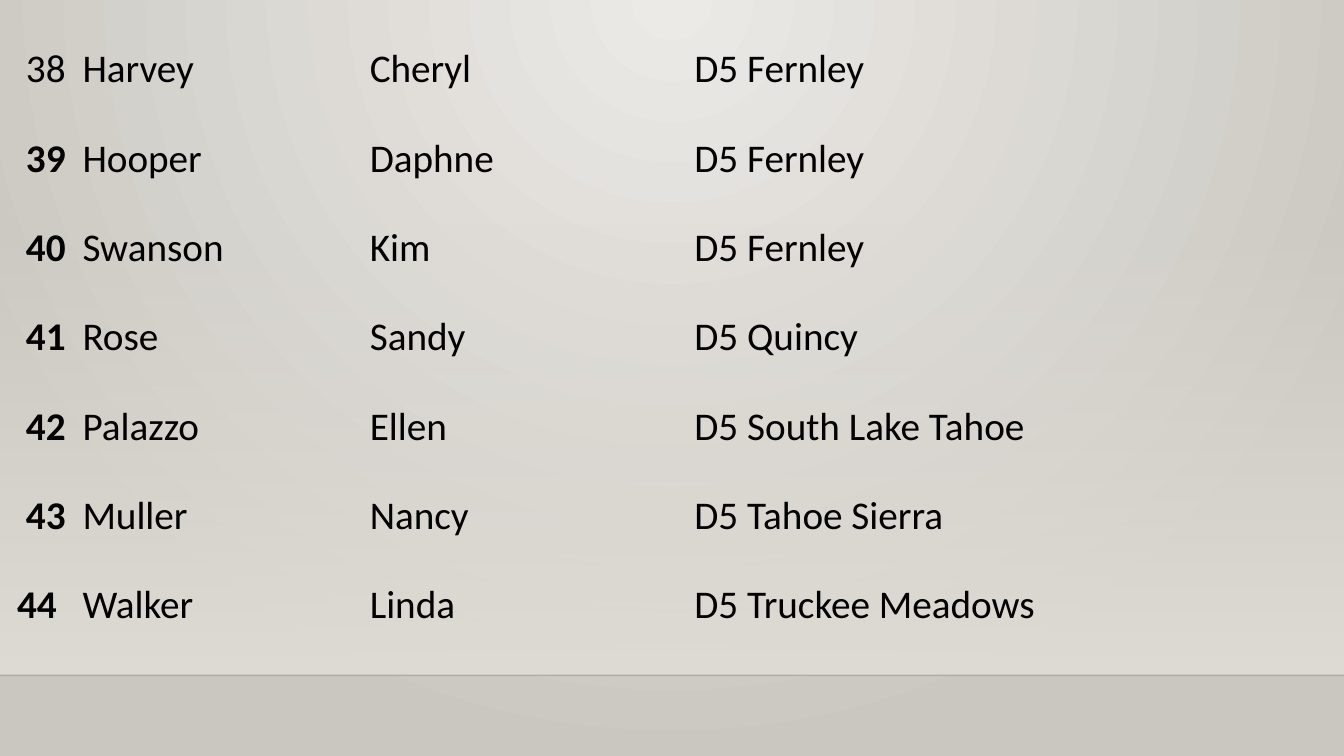
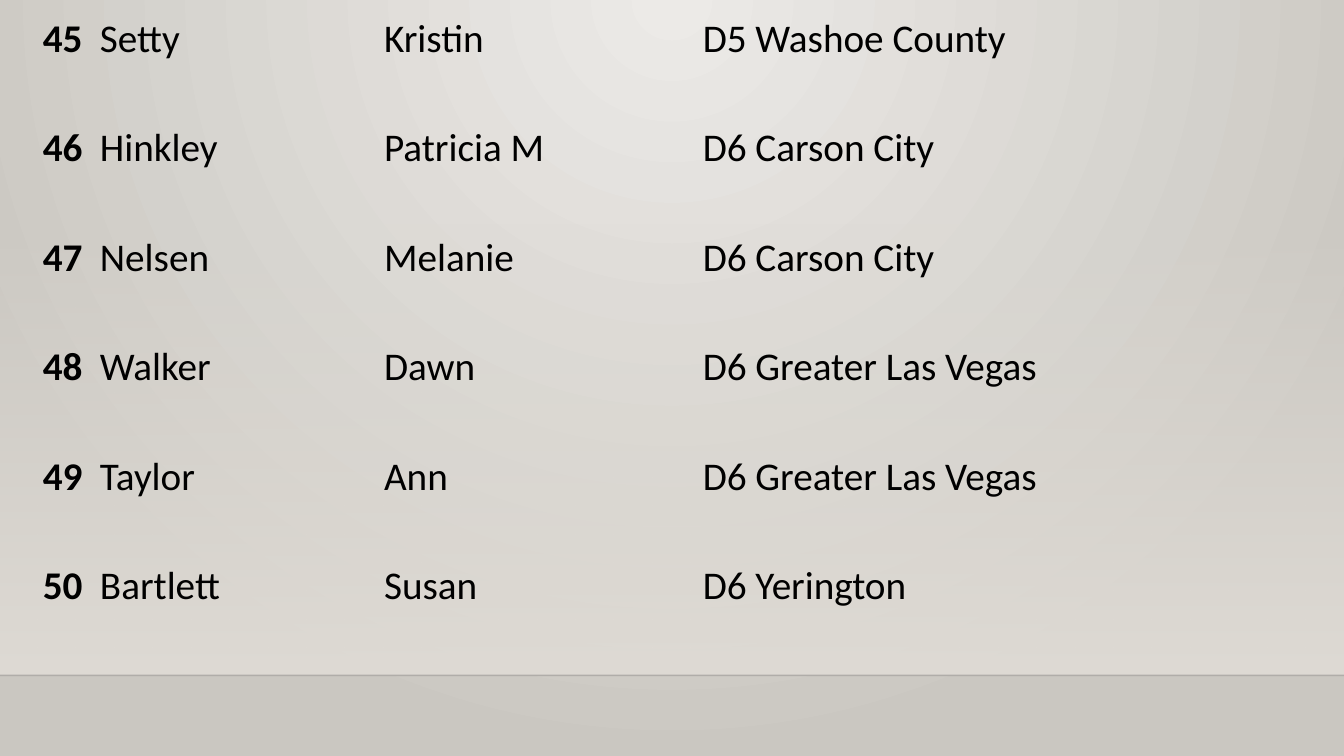
"""Build two roster slides that share a gradient background and a footer band."""
from lxml import etree
from pptx import Presentation
from pptx.dml.color import RGBColor
from pptx.enum.shapes import MSO_CONNECTOR, MSO_SHAPE
from pptx.enum.text import PP_ALIGN
from pptx.oxml.ns import qn
from pptx.util import Cm, Pt

STRAIGHT = MSO_CONNECTOR.STRAIGHT
RECTANGLE = MSO_SHAPE.RECTANGLE
CENTER, LEFT = PP_ALIGN.CENTER, PP_ALIGN.LEFT

WIDTH, HEIGHT = 33.87, 19.05
BAND_TOP, FLOOR = 5.61, 17.02
MARGIN = 0.1
BACKDROP = ("ECEAE7", "CAC7C1")
BAND = ("DFDBD5", "DFDBD5")
FOCUS = {"l": "43000", "t": "0", "r": "43000", "b": "100000"}
NO_STYLE = "{2D5ABB26-0587-4C30-8999-92F81FD0307C}"
TEXT = {"name": "Calibri", "size": Pt(28), "bold": False}

FIRST_ROSTER = [
    ("38", "Harvey", "Cheryl", "D5 Fernley"),
    ("39", "Hooper", "Daphne", "D5 Fernley"),
    ("40", "Swanson", "Kim", "D5 Fernley"),
    ("41", "Rose", "Sandy", "D5 Quincy"),
    ("42", "Palazzo", "Ellen", "D5 South Lake Tahoe"),
    ("43", "Muller", "Nancy", "D5 Tahoe Sierra"),
    ("44", "Walker", "Linda", "D5 Truckee Meadows"),
]
SECOND_ROSTER = [
    ("45", "Setty", "Kristin", "D5 Washoe County"),
    ("46", "Hinkley", "Patricia M", "D6 Carson City"),
    ("47", "Nelsen", "Melanie", "D6 Carson City"),
    ("48", "Walker", "Dawn", "D6 Greater Las Vegas"),
    ("49", "Taylor", "Ann", "D6 Greater Las Vegas"),
    ("50", "Bartlett", "Susan", "D6 Yerington"),
]


def color(value):
    """Return the colour of a hex string."""
    return RGBColor.from_string(value)


def set_alpha(element, percent):
    """Set the opacity of the first colour inside an element."""
    tone = next(element.iter(qn("a:srgbClr")))
    etree.SubElement(tone, qn("a:alpha"), val=str(percent * 1000))


def set_gradient(fill, stops):
    """Give a fill a two-stop gradient."""
    fill.gradient()
    for stop, value in zip(fill.gradient_stops, stops):
        stop.color.rgb = color(value)


class RosterDeck:
    """Holds the shared style and the current page."""

    def __init__(self):
        """Start the deck and dress its master."""
        self.deck = Presentation()
        self.deck.slide_width, self.deck.slide_height = Cm(WIDTH), Cm(HEIGHT)
        self.page = None
        self.add_page()
        self.style_backdrop()
        self.move_to_master(self.add_band(), self.add_floor_line())

    def add_page(self):
        """Start a page without a title."""
        self.page = self.deck.slides.add_slide(self.deck.slide_layouts[6])

    def style_backdrop(self):
        """Give the master a round gradient."""
        master = self.deck.slide_master
        set_gradient(master.background.fill, BACKDROP)
        gradient = next(master.element.iter(qn("a:gradFill")))
        linear = gradient.find(qn("a:lin"))
        round_path = etree.Element(qn("a:path"), {"path": "circle"})
        etree.SubElement(round_path, qn("a:fillToRect"), FOCUS)
        gradient.replace(linear, round_path)

    def add_band(self):
        """Add the band that fades in towards the floor line."""
        band = self.page.shapes.add_shape(
            RECTANGLE, 0, Cm(BAND_TOP), Cm(WIDTH), Cm(FLOOR - BAND_TOP))
        band.shadow.inherit = False
        band.line.fill.background()
        set_gradient(band.fill, BAND)
        band.fill.gradient_angle = 270
        set_alpha(band.element.spPr, 0)
        return band

    def add_floor_line(self):
        """Add the faint line under the band."""
        line = self.page.shapes.add_connector(
            STRAIGHT, 0, Cm(FLOOR), Cm(WIDTH), Cm(FLOOR))
        line.line.color.rgb = color("000001")
        line.line.width = Pt(1)
        properties = line.element.spPr
        set_alpha(properties, 20)
        etree.SubElement(properties, qn("a:effectLst"))
        return line

    def move_to_master(self, *shapes):
        """Move shapes to the back of the master."""
        tree = self.deck.slide_master.shapes.element
        for index, shape in enumerate(shapes, start=2):
            tree.insert(index, shape.element)

    def add_roster(self, corner, widths, row_height, people, spacer=None,
                   plain=(), left=()):
        """Add a roster table, with an optional empty row on top."""
        rows = [("",) * 4] * bool(spacer) + people
        heights = [spacer] * bool(spacer) + [row_height] * len(people)
        table = self.page.shapes.add_table(
            len(rows), len(widths), Cm(corner[0]), Cm(corner[1]),
            Cm(sum(widths)), Cm(sum(heights))).table
        table.first_row = table.horz_banding = False
        next(table._tbl.iter(qn("a:tableStyleId"))).text = NO_STYLE
        for column, width in zip(table.columns, widths):
            column.width = Cm(width)
        for row, height, values in zip(table.rows, heights, rows):
            row.height = Cm(height)
            number = values[0]
            for index, (cell, value) in enumerate(zip(row.cells, (*values, ""))):
                is_number = index == 0
                self.write_cell(
                    cell, value, bold=is_number and number not in plain,
                    align=CENTER if is_number and number not in left else LEFT)

    def write_cell(self, cell, value, bold, align):
        """Clear a cell's fill and write its text."""
        cell.fill.background()
        margin = Cm(MARGIN if value else 0)
        for side in ("left", "right", "top", "bottom"):
            setattr(cell, f"margin_{side}", margin)
        if not value:
            return
        para = cell.text_frame.paragraphs[0]
        para.alignment = align
        span = para.add_run()
        span.text = value
        for name, setting in {**TEXT, "bold": bold}.items():
            setattr(span.font, name, setting)
        span.font.color.rgb = color("000000")


def main():
    """Build and save the deck."""
    roster = RosterDeck()
    roster.add_roster((0.33, 0.15), (1.65, 7.24, 8.18, 8.92, 7.44), 2.25,
                      FIRST_ROSTER, spacer=0.9, plain=("38",), left=("44",))
    roster.add_page()
    roster.add_roster((0.74, 0.28), (1.68, 7.16, 8.03, 8.92, 7.14), 2.76,
                      SECOND_ROSTER)
    roster.deck.save("out.pptx")


if __name__ == "__main__":
    main()
